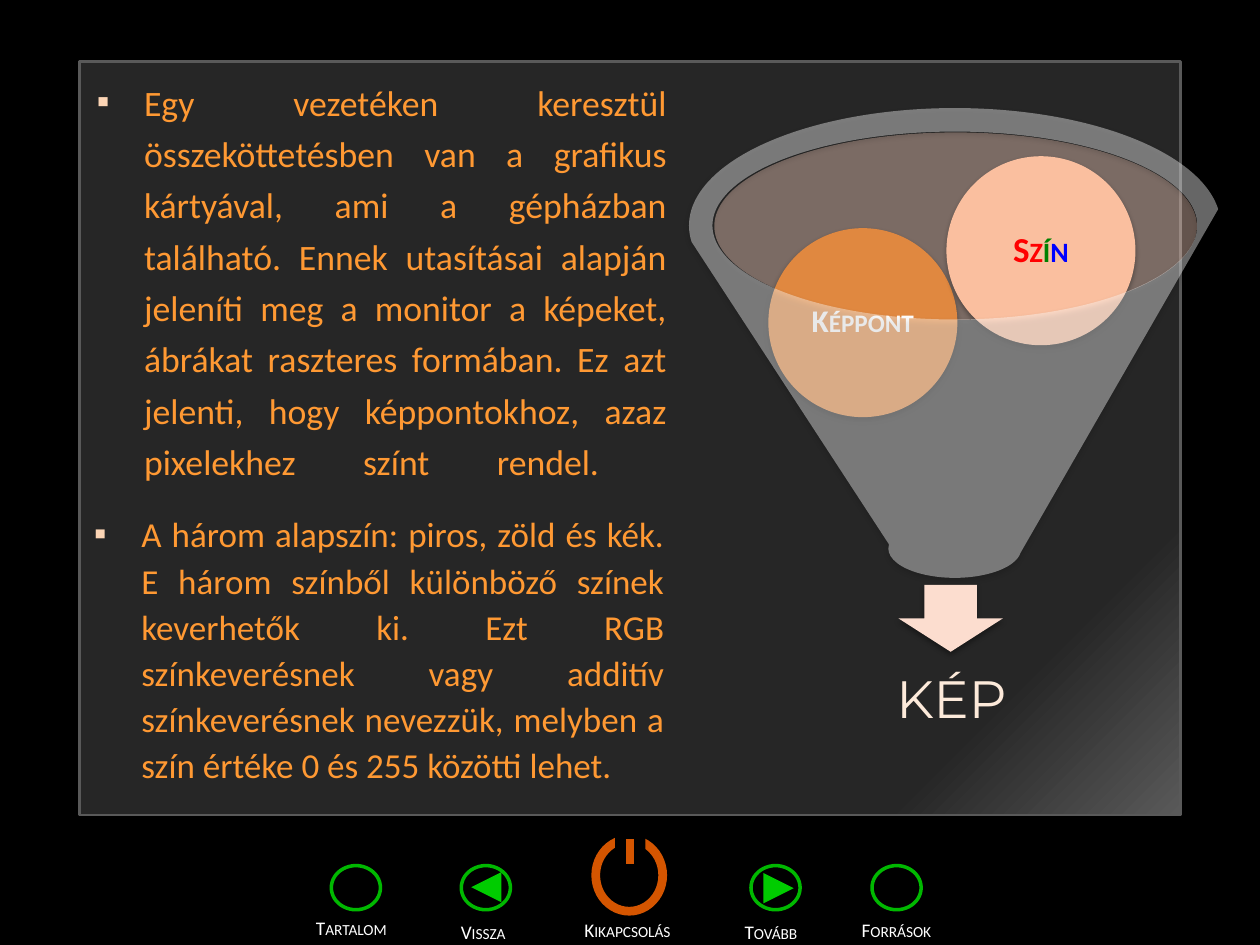
import pptx
import pptx.util
import pptx.dml.color
import pptx.enum.shapes
import pptx.enum.text
import pptx.oxml
import pptx.oxml.ns

Cm, Pt = pptx.util.Cm, pptx.util.Pt
RGBColor = pptx.dml.color.RGBColor
SHAPE = pptx.enum.shapes.MSO_SHAPE
ALIGN = pptx.enum.text.PP_ALIGN
ANCHOR = pptx.enum.text.MSO_ANCHOR
qn = pptx.oxml.ns.qn

BLACK = RGBColor(0x00, 0x00, 0x00)
WHITE = RGBColor(0xFF, 0xFF, 0xFF)
PANEL_DARK = RGBColor(0x26, 0x26, 0x26)
PANEL_LIGHT = RGBColor(0x59, 0x59, 0x59)
POWER = RGBColor(0xD4, 0x55, 0x00)
RING = RGBColor(0x00, 0xB8, 0x00)
TRIANGLE = RGBColor(0x00, 0xCC, 0x00)
BODY = RGBColor(0xFF, 0x99, 0x33)
MOUTH = RGBColor(0xFB, 0xD3, 0xC1)
ARROW = RGBColor(0xFC, 0xDD, 0xCF)
RESULT = RGBColor(0xFD, 0xEA, 0xDA)
PIXEL_BALL = RGBColor(0xE0, 0x88, 0x40)
COLOUR_BALL = RGBColor(0xFA, 0xBF, 0x9F)
RED = RGBColor(0xFF, 0x00, 0x00)
GREEN = RGBColor(0x00, 0x80, 0x00)
BLUE = RGBColor(0x00, 0x00, 0xFF)

CABLE = ("Egy vezetéken keresztül összeköttetésben van a grafikus kártyával, ami a "
         "gépházban található. Ennek utasításai alapján jeleníti meg a monitor a képeket, "
         "ábrákat raszteres formában. Ez azt jelenti, hogy képpontokhoz, azaz pixelekhez "
         "színt rendel. ")
COLOURS = ("A három alapszín: piros, zöld és kék. E három színből különböző színek "
           "keverhetők ki. Ezt RGB színkeverésnek vagy additív színkeverésnek nevezzük, "
           "melyben a szín értéke 0 és 255 közötti lehet.")
BUTTONS = [
    ("Tartalom", 6.12, 18.34, 2.11, 6.68),
    ("Vissza", 9.04, 18.42, 1.5, 9.3),
    ("Kikapcsolás", 11.53, 18.39, 2.49, None),
    ("Tovább", 14.76, 18.42, 1.75, 15.14),
    ("Források", 17.12, 18.39, 1.93, 17.58),
]
TRIANGLES = [(9.5, 17.58, 270), (15.39, 17.6, 90)]
BALLS = [
    (15.49, 4.6, PIXEL_BALL, 18, [("Képpont", WHITE)]),
    (19.08, 3.15, COLOUR_BALL, 20, [("Sz", RED), ("í", GREEN), ("n", BLUE)]),
]

EFFECTS = f'<a:effectLst {pptx.oxml.ns.nsdecls("a")}>%s</a:effectLst>'
SHADOW = ('<a:outerShdw blurRad="39400" dist="22900" dir="5400000" rotWithShape="0">'
          '<a:srgbClr val="000000"><a:alpha val="35000"/></a:srgbClr></a:outerShdw>')


def box(at):
    return [Cm(length) for length in at]


def add_figure(slide, kind, at, fill=None, line=None, width=1, alpha=None, shadow=False):
    figure = slide.shapes.add_shape(kind, *box(at))
    figure.shadow.inherit = False
    if fill is None:
        figure.fill.background()
    else:
        figure.fill.solid()
        figure.fill.fore_color.rgb = fill
    if line is None:
        figure.line.fill.background()
    else:
        figure.line.color.rgb = line
        figure.line.width = Pt(width)
    properties = figure._element.spPr
    if alpha:
        colour = properties.find(qn("a:solidFill")).find(qn("a:srgbClr"))
        colour.append(pptx.oxml.parse_xml(
            f'<a:alpha {pptx.oxml.ns.nsdecls("a")} val="{alpha * 1000}"/>'))
    if shadow:
        properties.replace(properties.find(qn("a:effectLst")),
                           pptx.oxml.parse_xml(EFFECTS % SHADOW))
    return figure


def add_run(paragraph, text, size, colour, font="Calibri", bold=None, small=False):
    run = paragraph.add_run()
    run.text = text
    run.font.size = Pt(size)
    run.font.name = font
    run.font.bold = bold
    run.font.color.rgb = colour
    if small:
        run._r.get_or_add_rPr().set("cap", "small")


def add_box(slide, at):
    added = slide.shapes.add_textbox(*box(at))
    added.text_frame.word_wrap = True
    return added


def write_bullet(frame, text, size, spacing, before=0):
    paragraph = frame.paragraphs[0]
    paragraph.alignment = ALIGN.JUSTIFY
    paragraph.line_spacing = spacing
    paragraph.space_before = Pt(before)
    properties = paragraph._p.get_or_add_pPr()
    properties.set("marL", str(Cm(0.95)))
    properties.set("indent", str(-Cm(0.95)))
    for bullet in ('<a:buClr %s><a:srgbClr val="FCD5B5"/></a:buClr>',
                   '<a:buFont %s typeface="Calibri"/>', '<a:buChar %s char="▪"/>'):
        properties.append(pptx.oxml.parse_xml(bullet % pptx.oxml.ns.nsdecls("a")))
    add_run(paragraph, text, size, BODY)
    return paragraph


def centre(frame, margin):
    frame.vertical_anchor = ANCHOR.MIDDLE
    frame.margin_left = frame.margin_right = Cm(margin)
    frame.margin_top = frame.margin_bottom = Cm(margin)
    paragraph = frame.paragraphs[0]
    paragraph.alignment = ALIGN.CENTER
    paragraph.line_spacing = 0.9
    return paragraph


def add_navigation(slide):
    add_figure(slide, SHAPE.OVAL, (12.01, 16.92, 1.35, 1.45), line=POWER, width=5)
    add_figure(slide, SHAPE.RECTANGLE, (12.4, 16.69, 0.61, 0.46), BLACK)
    bar = slide.shapes.add_connector(pptx.enum.shapes.MSO_CONNECTOR.STRAIGHT,
                                     *box((12.7, 16.92, 12.7, 17.42)))
    bar.line.color.rgb = POWER
    bar.line.width = Pt(5)
    bar._element.spPr.append(pptx.oxml.parse_xml(EFFECTS % ""))
    for label, left, top, width, ring in BUTTONS:
        if ring:
            add_figure(slide, SHAPE.OVAL, (ring, 17.45, 0.99, 0.89), line=RING, width=2)
        caption = add_box(slide, (left, top, width, 0.74))
        add_run(caption.text_frame.paragraphs[0], label, 11, WHITE, small=True)
    for left, top, rotation in TRIANGLES:
        triangle = add_figure(slide, SHAPE.FLOWCHART_EXTRACT, (left, top, 0.61, 0.61), TRIANGLE)
        triangle.rotation = rotation


def add_funnel(slide):
    add_figure(slide, SHAPE.OVAL, (14.4, 2.67, 9.73, 3.78), MOUTH, alpha=40)
    add_figure(slide, SHAPE.DOWN_ARROW, (18.11, 11.79, 2.11, 1.35), ARROW, shadow=True)
    result = add_box(slide, (14.1, 12.88, 10.16, 2.54))
    add_run(centre(result.text_frame, 0.58), "KÉP", 30, RESULT, "Montserrat")
    for left, top, fill, size, parts in BALLS:
        ball = add_figure(slide, SHAPE.OVAL, (left, top, 3.81, 3.81), fill, shadow=True)
        paragraph = centre(ball.text_frame, 0.08)
        for text, colour in parts:
            add_run(paragraph, text, size, colour, bold=True, small=True)
    add_figure(slide, SHAPE.FUNNEL, (13.89, 2.18, 10.72, 9.47), WHITE, alpha=40, shadow=True)


def main():
    deck = pptx.Presentation()
    deck.slide_width, deck.slide_height = Cm(25.4), Cm(19.05)
    slide = deck.slides.add_slide(deck.slide_layouts[1])
    slide.background.fill.solid()
    slide.background.fill.fore_color.rgb = BLACK
    title = slide.shapes.title._element
    title.getparent().remove(title)

    panel = add_figure(slide, SHAPE.RECTANGLE, (1.6, 1.24, 22.2, 15.19),
                       line=PANEL_LIGHT, width=1.5)
    panel.fill.gradient()
    panel.fill.gradient_angle = 315
    stops = [(0.84, PANEL_DARK), (1, PANEL_LIGHT)]
    for stop, (position, colour) in zip(panel.fill.gradient_stops, stops):
        stop.position = position
        stop.color.rgb = colour
    add_navigation(slide)

    cable = slide.placeholders[1]
    cable.left, cable.top, cable.width, cable.height = box((1.7, 1.32, 11.99, 9.6))
    cable.text_frame.auto_size = pptx.enum.text.MSO_AUTO_SIZE.NONE
    write_bullet(cable.text_frame, CABLE, 20.4, 1.2, 4).add_line_break()
    slide.shapes._spTree.append(cable._element)
    add_funnel(slide)
    colours = add_box(slide, (1.65, 10.13, 11.99, 6.68))
    write_bullet(colours.text_frame, COLOURS, 20, 1.1)
    deck.save("out.pptx")


if __name__ == "__main__":
    main()
